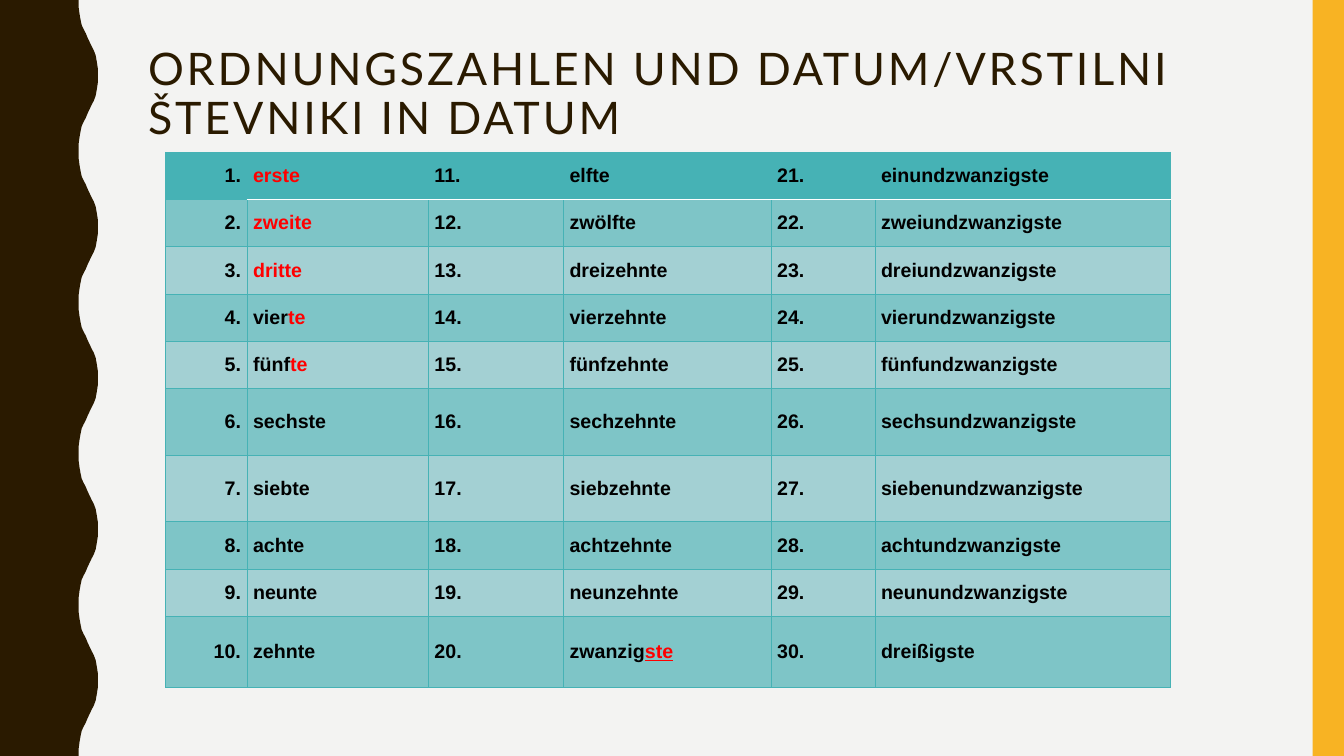
from lxml import etree
from pptx import Presentation, util as u
from pptx.dml.color import RGBColor
from pptx.enum import shapes, text
from pptx.oxml import ns

PAPER = RGBColor(0xF3, 0xF3, 0xF2)
BROWN = RGBColor(0x2A, 0x1A, 0x00)
AMBER = RGBColor(0xF8, 0xB3, 0x23)
TEAL = RGBColor(0x46, 0xB2, 0xB5)
BAND_DARK = RGBColor(0x7E, 0xC5, 0xC7)
BAND_LIGHT = RGBColor(0xA3, 0xD0, 0xD3)
WHITE = RGBColor(0xFF, 0xFF, 0xFF)
BLACK = RGBColor(0x00, 0x00, 0x00)
RED = RGBColor(0xFF, 0x00, 0x00)

ORDINALS = [
    "erste", "zweite", "dritte", "vierte", "fünfte",
    "sechste", "siebte", "achte", "neunte", "zehnte",
    "elfte", "zwölfte", "dreizehnte", "vierzehnte", "fünfzehnte",
    "sechzehnte", "siebzehnte", "achtzehnte", "neunzehnte", "zwanzigste",
    "einundzwanzigste", "zweiundzwanzigste", "dreiundzwanzigste",
    "vierundzwanzigste", "fünfundzwanzigste", "sechsundzwanzigste",
    "siebenundzwanzigste", "achtundzwanzigste", "neunundzwanzigste",
    "dreißigste",
]
RED_ENDINGS = {1: "erste", 2: "zweite", 3: "dritte", 4: "te", 5: "te", 20: "ste"}
UNDERLINED = {20}
DECADE = 10

COLUMN_WIDTHS = [6.08, 13.5, 10.05, 15.45, 7.73, 21.98]
ROW_HEIGHTS = [6.26] * 5 + [8.8] * 2 + [6.26] * 2 + [9.33]

HALF_WAVE = [
    (5.85, 0), (5.85, 0.93), (5.92, 1.87), (6, 2.67), (6.08, 3.33),
    (6.22, 3.87), (6.38, 4.4), (6.52, 5), (6.68, 5.6), (6.82, 6.13),
    (6.98, 6.67), (7.12, 7.33), (7.2, 8.13), (7.28, 9.07), (7.28, 10),
]
WAVE_LENGTH = 20


class Deck:
    title_font, table_font = "Lato", "Arial"
    title_size, table_size = u.Pt(32), u.Pt(14)

    def __init__(self):
        self.show = Presentation()
        self.show.slide_width = u.Inches(13.33)
        self.show.slide_height = u.Inches(7.5)
        self.slide = self.show.slides.add_slide(self.show.slide_layouts[6])
        self.slide.background.fill.solid()
        self.slide.background.fill.fore_color.rgb = PAPER

    def x(self, columns):
        return round(self.show.slide_width * columns / 100)

    def y(self, rows):
        return round(self.show.slide_height * rows / 100)

    def box(self, left, top, width, height):
        return self.x(left), self.y(top), self.x(width), self.y(height)

    def paint(self, shape, color):
        shape.shadow.inherit = False
        shape.fill.solid()
        shape.fill.fore_color.rgb = color
        shape.line.fill.background()

    def bar(self, color, *place):
        strip = self.slide.shapes.add_shape(
            shapes.MSO_SHAPE.RECTANGLE, *self.box(*place))
        self.paint(strip, color)

    def outline(self, color, points):
        corners = [(self.x(c), self.y(r)) for c, r in points]
        builder = self.slide.shapes.build_freeform(*corners[0])
        builder.add_line_segments(corners[1:], close=True)
        self.paint(builder.convert_to_shape(), color)

    def run(self, paragraph, words, font, size, color, bold=False, underline=False):
        run = paragraph.add_run()
        run.text = words
        run.font.name, run.font.size = font, size
        run.font.bold, run.font.underline = bold, underline
        run.font.color.rgb = color
        return run

    def title(self, words, *place):
        frame = self.slide.shapes.add_textbox(*self.box(*place)).text_frame
        frame.word_wrap = True
        frame.vertical_anchor = text.MSO_ANCHOR.TOP
        paragraph = frame.paragraphs[0]
        paragraph.line_spacing = 0.9
        heading = self.run(paragraph, words, self.title_font, self.title_size, BROWN)
        heading.font._element.set("spc", "200")

    def border(self, cell, side, color, points):
        properties = cell._tc.get_or_add_tcPr()
        edge = etree.SubElement(properties, ns.qn(f"a:ln{side}"), w=str(u.Pt(points)))
        fill = etree.SubElement(edge, ns.qn("a:solidFill"))
        etree.SubElement(fill, ns.qn("a:srgbClr"), val=str(color))

    def style_cell(self, cell, row, column):
        cell.margin_left = cell.margin_right = u.Inches(0.06)
        cell.margin_top = cell.margin_bottom = u.Inches(0.03)
        cell.vertical_anchor = text.MSO_ANCHOR.MIDDLE
        header_side = {0: "B", 1: "T"}.get(row) if column else None
        for side in "LRTB":
            rule = (WHITE, 1) if side == header_side else (TEAL, 0.5)
            self.border(cell, side, *rule)
        cell.fill.solid()
        band = BAND_DARK if row % 2 else BAND_LIGHT
        cell.fill.fore_color.rgb = band if row else TEAL

    def ordinal_table(self, left, top):
        place = self.box(left, top, sum(COLUMN_WIDTHS), sum(ROW_HEIGHTS))
        table = self.slide.shapes.add_table(
            len(ROW_HEIGHTS), len(COLUMN_WIDTHS), *place).table
        for column, width in zip(table.columns, COLUMN_WIDTHS):
            column.width = self.x(width)
        for row, height in zip(table.rows, ROW_HEIGHTS):
            row.height = self.y(height)
        for number, word in enumerate(ORDINALS, 1):
            decade, row = divmod(number - 1, DECADE)
            ending = RED_ENDINGS.get(number, "")
            stem = word.removesuffix(ending)
            contents = [[(f"{number}.", BLACK, False)],
                        [(stem, BLACK, False), (ending, RED, number in UNDERLINED)]]
            for column, pieces in enumerate(contents, 2 * decade):
                cell = table.cell(row, column)
                self.style_cell(cell, row, column)
                paragraph = cell.text_frame.paragraphs[0]
                paragraph.alignment = text.PP_ALIGN.LEFT if column else text.PP_ALIGN.RIGHT
                for words, color, underline in pieces:
                    if words:
                        self.run(paragraph, words, self.table_font, self.table_size,
                                 color, True, underline)


def wavy_edge():
    falling = [(c, WAVE_LENGTH - r) for c, r in reversed(HALF_WAVE[:-1])]
    wave = HALF_WAVE + falling
    crests = [(c, r + start) for start in range(0, 100, WAVE_LENGTH) for c, r in wave]
    return [(0, 0), *crests, (0, 100)]


def main():
    deck = Deck()
    deck.outline(BROWN, wavy_edge())
    deck.bar(AMBER, 97.67, 0, 2.33, 100)
    deck.title("ORDNUNGSZAHLEN UND DATUM/VRSTILNI ŠTEVNIKI IN DATUM",
               10.28, 5.6, 83.5, 21.73)
    deck.ordinal_table(12.3, 20.13)
    deck.show.save("out.pptx")


if __name__ == "__main__":
    main()
